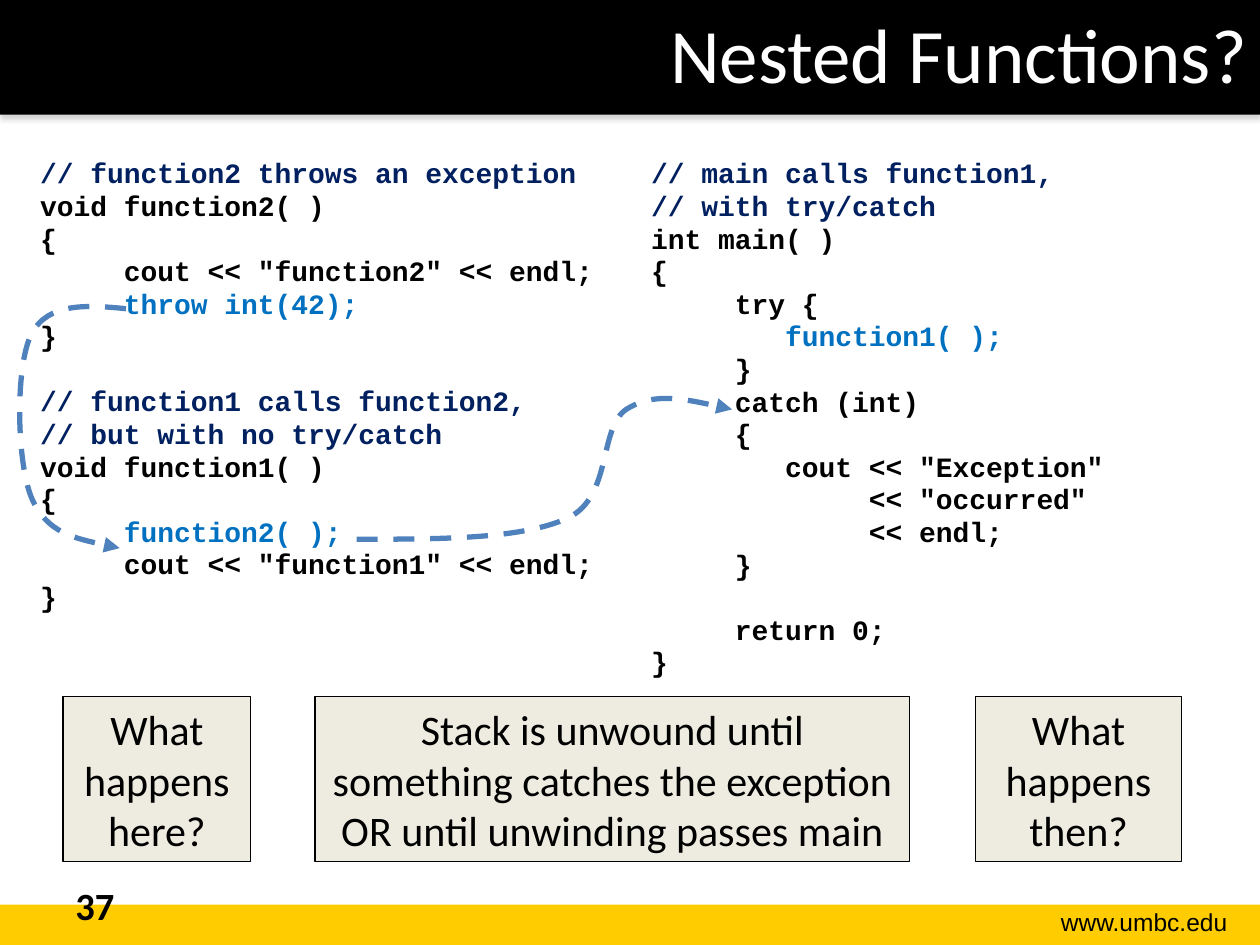
from lxml import etree
from pptx import Presentation
from pptx.dml.color import RGBColor
from pptx.enum import dml, shapes, text
from pptx.oxml import parse_xml
from pptx.oxml.ns import nsdecls, qn
from pptx.util import Inches, Pt

BLACK = RGBColor(0x00, 0x00, 0x00)
WHITE = RGBColor(0xFF, 0xFF, 0xFF)
GOLD = RGBColor(0xFF, 0xCC, 0x00)
NAVY = RGBColor(0x00, 0x20, 0x60)
BLUE = RGBColor(0x00, 0x70, 0xC0)
ARROW_BLUE = RGBColor(0x4F, 0x81, 0xBD)
CREAM = RGBColor(0xEE, 0xEC, 0xE1)

LEFT, CENTER, RIGHT = (text.PP_ALIGN.LEFT, text.PP_ALIGN.CENTER,
                       text.PP_ALIGN.RIGHT)

prs = Presentation()
prs.slide_width, prs.slide_height = Inches(10), Inches(7.5)
slide = prs.slides.add_slide(prs.slide_layouts[6])


def add_rect(left, top, width, height, color):
    rect = slide.shapes.add_shape(
        shapes.MSO_SHAPE.RECTANGLE,
        *(Inches(v) for v in (left, top, width, height)))
    rect.shadow.inherit = False
    rect.fill.solid()
    rect.fill.fore_color.rgb = color
    rect.line.fill.background()
    return rect


def write(paragraph, words, color, **font):
    run = paragraph.add_run()
    run.text = words
    run.font.color.rgb = color
    for key, value in font.items():
        setattr(run.font, key, value)


# Footer band and header bar with its soft shadow
add_rect(0, 7.18, 10, 0.32, GOLD)
header = add_rect(0, 0, 10, 0.91, BLACK)
header.element.spPr.find(qn("a:effectLst")).append(parse_xml(
    f'<a:outerShdw {nsdecls("a")} blurRad="{Pt(3.1)}" dist="{Pt(1.8)}" '
    'dir="5400000" rotWithShape="0"><a:srgbClr val="808080">'
    '<a:alpha val="35000"/></a:srgbClr></a:outerShdw>'))

# Web address, title and page number
labels = [
    ((7.85, 7.15, 1.99, 0.34), "www.umbc.edu", RIGHT, BLACK,
     dict(name="Arial", size=Pt(14))),
    ((1, 0, 9, 1.25), "Nested Functions?", RIGHT, WHITE,
     dict(name="Calibri", size=Pt(44))),
    ((0.5, 6.95, 2.33, 0.4), "37", LEFT, BLACK,
     dict(name="Calibri", size=Pt(22), bold=True)),
]
for box, words, align, color, font in labels:
    label = slide.shapes.add_textbox(*map(Inches, box)).text_frame
    label.word_wrap = True
    label.paragraphs[0].alignment = align
    write(label.paragraphs[0], words, color, **font)

# Two code columns; a blank source line becomes a wider gap
throwing_code = """\
// function2 throws an exception
void function2( )
{
     cout << "function2" << endl;
     throw int(42);
}

// function1 calls function2,
// but with no try/catch
void function1( )
{
     function2( );
     cout << "function1" << endl;
}"""
catching_code = """\
// main calls function1,
// with try/catch
int main( )
{
     try {
        function1( );
     }
     catch (int)
     {
        cout << "Exception"
             << "occurred"
             << endl;
     }

     return 0;
}"""
highlights = {"throw int(42);", "function2( );", "function1( );"}
LINE_GAP, BLANK_LINE = 3.25, 18.55

for left, code in ((0.22, throwing_code), (5.07, catching_code)):
    column = slide.shapes.add_textbox(
        Inches(left), Inches(1.24), Inches(4.69), Inches(4.95)).text_frame
    column.word_wrap = True
    paragraph, gap = column.paragraphs[0], 0
    for line in code.splitlines():
        if not line:
            gap += BLANK_LINE
            continue
        if paragraph.runs:
            paragraph = column.add_paragraph()
        paragraph.line_spacing = 0.8
        paragraph.space_before = Pt(gap)
        color = (NAVY if line.startswith("//")
                 else BLUE if line.strip() in highlights else BLACK)
        write(paragraph, line, color,
              name="Courier New", size=Pt(16), bold=True)
        gap = LINE_GAP

# Curved arrows: a start point, then three points for each Bézier segment
unwind_arrows = [
    [(1, 2.45), (0.69, 2.42), (0.38, 2.4), (0.25, 2.65),
     (0.12, 2.9), (0.13, 3.66), (0.25, 3.95),
     (0.37, 4.23), (0.66, 4.29), (0.95, 4.35)],
    [(2.83, 4.28), (3.49, 4.28), (4.15, 4.28), (4.51, 4.11),
     (4.86, 3.94), (4.75, 3.4), (4.97, 3.25),
     (5.19, 3.11), (5.5, 3.18), (5.81, 3.25)],
]
for start, *points in unwind_arrows:
    builder = slide.shapes.build_freeform(*map(Inches, start))
    builder.add_line_segments(
        [tuple(map(Inches, point)) for point in points], close=False)
    arrow = builder.convert_to_shape()
    arrow.shadow.inherit = False
    arrow.fill.background()
    arrow.line.color.rgb = ARROW_BLUE
    arrow.line.width = Pt(3)
    arrow.line.dash_style = dml.MSO_LINE.DASH
    etree.SubElement(arrow.element.spPr.find(qn("a:ln")), qn("a:tailEnd"),
                     type="triangle")
    route = next(arrow.element.iter(qn("a:path")))
    segments = route.findall(qn("a:lnTo"))
    for first in range(0, len(segments), 3):
        curve = etree.SubElement(route, qn("a:cubicBezTo"))
        for segment in segments[first:first + 3]:
            curve.append(segment[0])
            route.remove(segment)

# Question and answer boxes
for left, width, words in (
        (0.5, 1.49, "What happens here?"),
        (2.5, 4.72, "Stack is unwound until something catches the exception "
                    "OR until unwinding passes main"),
        (7.74, 1.64, "What happens then?")):
    note = add_rect(left, 5.53, width, 1.31, CREAM)
    note.line.color.rgb = BLACK
    note.line.width = Pt(0.75)
    note.text_frame.word_wrap = True
    note.text_frame.paragraphs[0].alignment = CENTER
    write(note.text_frame.paragraphs[0], words, BLACK,
          name="Calibri", size=Pt(24))

prs.save("out.pptx")
